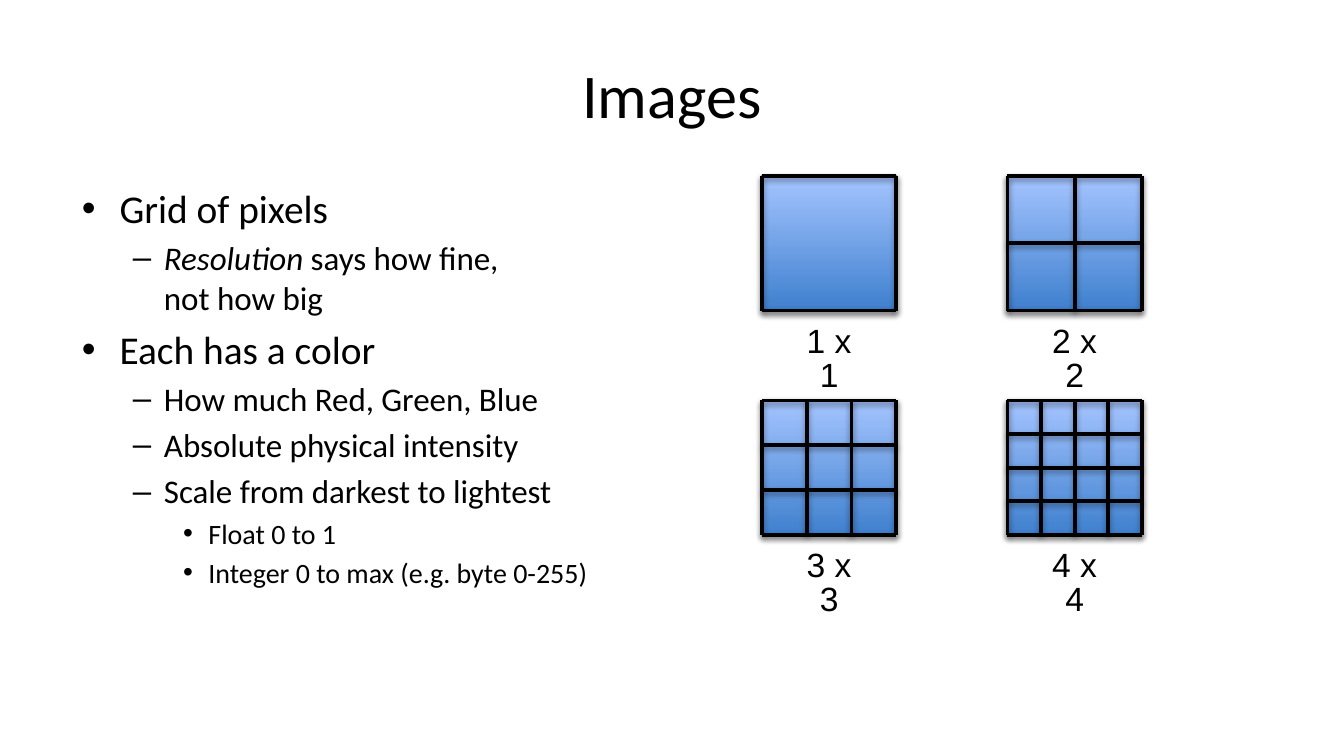
"""Builds a slide on image resolution with four pixel grids."""
from dataclasses import dataclass

from lxml import etree
from pptx import Presentation
from pptx.dml.color import RGBColor
from pptx.enum.shapes import MSO_CONNECTOR, MSO_SHAPE
from pptx.enum.text import MSO_ANCHOR, MSO_AUTO_SIZE, PP_ALIGN
from pptx.oxml.ns import qn
from pptx.shapes.autoshape import Shape
from pptx.slide import Slide
from pptx.text.text import TextFrame
from pptx.util import Cm, Pt

RECTANGLE = MSO_SHAPE.RECTANGLE
STRAIGHT = MSO_CONNECTOR.STRAIGHT
CENTER = PP_ALIGN.CENTER
MIDDLE = MSO_ANCHOR.MIDDLE
FIT_SHAPE = MSO_AUTO_SIZE.SHAPE_TO_FIT_TEXT
TOP, LEFT, BOTTOM, RIGHT = range(4)

BLACK = "000000"
GRID_SIDE = 2.54


@dataclass(frozen=True)
class Level:
    size: float
    margin: float
    hanging: float
    bullet: str


@dataclass(frozen=True)
class Point:
    level: int
    text: str
    emphasis: str = ""


@dataclass(frozen=True)
class PixelGrid:
    cells: int
    left: float
    top: float


LEVELS = (
    Level(21.1, 0.71, 0.71, "•"),
    Level(17.7, 1.55, 0.59, "–"),
    Level(15, 2.39, 0.48, "•"),
)
POINTS = (
    Point(0, "Grid of pixels"),
    Point(1, " says how fine, \vnot how big", "Resolution"),
    Point(0, "Each has a color"),
    Point(1, "How much Red, Green, Blue"),
    Point(1, "Absolute physical intensity"),
    Point(1, "Scale from darkest to lightest"),
    Point(2, "Float 0 to 1"),
    Point(2, "Integer 0 to max (e.g. byte 0-255)"),
)
GRIDS = (
    PixelGrid(1, 14.4, 3.33),
    PixelGrid(2, 19.04, 3.33),
    PixelGrid(3, 14.4, 7.57),
    PixelGrid(4, 19.04, 7.57),
)


def color(value: str) -> RGBColor:
    """Turn a hex string into a colour."""
    return RGBColor.from_string(value)


def set_font(font, name: str, size: float) -> None:
    """Give a font its face, size and black colour."""
    font.name = name
    font.size = Pt(size)
    font.color.rgb = color(BLACK)


def add_shadow(properties, distance: float, opacity: int) -> None:
    """Append a soft downward shadow to shape properties."""
    effects = etree.SubElement(properties, qn("a:effectLst"))
    shadow = etree.SubElement(
        effects, qn("a:outerShdw"), blurRad=str(Pt(3.1)), dist=str(Pt(distance)),
        dir="5400000", rotWithShape="0",
    )
    tint = etree.SubElement(shadow, qn("a:srgbClr"), val=BLACK)
    etree.SubElement(tint, qn("a:alpha"), val=str(opacity * 1000))


def add_frame(slide: Slide, left: float, top: float, width: float, height: float) -> TextFrame:
    """Add a wrapping text box and return its text frame."""
    frame = slide.shapes.add_textbox(Cm(left), Cm(top), Cm(width), Cm(height)).text_frame
    frame.word_wrap = True
    frame.margin_left = frame.margin_right = Cm(0.28)
    frame.margin_top = frame.margin_bottom = Cm(0.15)
    return frame


def add_title(slide: Slide, text: str) -> None:
    """Add the centred slide title."""
    frame = add_frame(slide, 1.27, 0.58, 22.86, 2.39)
    frame.vertical_anchor = MIDDLE
    title = frame.paragraphs[0]
    title.text = text
    title.alignment = CENTER
    set_font(title.font, "Calibri", 33.3)


def add_points(slide: Slide, points: tuple[Point, ...]) -> None:
    """Add the bulleted outline."""
    frame = add_frame(slide, 1.27, 3.33, 11.23, 9.42)
    for index, point in enumerate(points):
        paragraph = frame.add_paragraph() if index else frame.paragraphs[0]
        level = LEVELS[point.level]
        paragraph.level = point.level
        paragraph.space_before = Pt(round(0.2 * level.size, 1))
        properties = paragraph._p.get_or_add_pPr()
        properties.set("marL", str(Cm(level.margin)))
        properties.set("indent", str(-Cm(level.hanging)))
        etree.SubElement(properties, qn("a:buFont"), typeface="Arial")
        etree.SubElement(properties, qn("a:buChar"), char=level.bullet)
        set_font(paragraph.font, "Calibri", level.size)
        if point.emphasis:
            emphasis = paragraph.add_run()
            emphasis.text = point.emphasis
            emphasis.font.italic = True
        for part, wording in enumerate(point.text.split("\v")):
            if part:
                paragraph.add_line_break()
            paragraph.add_run().text = wording


def add_square(slide: Slide, grid: PixelGrid) -> Shape:
    """Add the shaded square behind a grid."""
    side = Cm(GRID_SIDE)
    square = slide.shapes.add_shape(RECTANGLE, Cm(grid.left), Cm(grid.top), side, side)
    square.fill.gradient()
    square.fill.gradient_angle = 90
    for stop, shade in zip(square.fill.gradient_stops, ("3F80CE", "A4C4FF")):
        stop.color.rgb = color(shade)
    for stop, position in zip(square.fill.gradient_stops, (0, 1)):
        stop.position = position
    square.line.color.rgb = color("4B7EBC")
    square.line.width = Pt(0.75)
    add_shadow(square._element.spPr, 1.8, 35)
    return square


def add_rule(slide: Slide, start: tuple[float, float], end: tuple[float, float],
             square: Shape, sites: tuple[int, ...]) -> None:
    """Add one grid line, joined to the square when sites are given."""
    rule = slide.shapes.add_connector(STRAIGHT, *map(Cm, start + end))
    if sites:
        rule.begin_connect(square, sites[0])
        rule.end_connect(square, sites[1])
    rule.line.color.rgb = color(BLACK)
    rule.line.width = Pt(2)
    add_shadow(rule._element.spPr, 1.6, 38)


def add_grid(slide: Slide, grid: PixelGrid) -> None:
    """Add a square, its grid lines and its caption."""
    square = add_square(slide, grid)
    right, bottom = grid.left + GRID_SIDE, grid.top + GRID_SIDE
    for index in range(grid.cells + 1):
        offset = GRID_SIDE * index / grid.cells
        x, y = grid.left + offset, grid.top + offset
        halfway = 2 * index == grid.cells
        add_rule(slide, (x, grid.top), (x, bottom), square, (TOP, BOTTOM) if halfway else ())
        add_rule(slide, (grid.left, y), (right, y), square, (LEFT, RIGHT) if halfway else ())
    frame = add_frame(slide, grid.left + 0.32, grid.top + 2.7, 1.9, 0.89)
    frame.word_wrap = False
    frame.auto_size = FIT_SHAPE
    caption = frame.paragraphs[0]
    caption.text = f"{grid.cells} x {grid.cells}"
    caption.alignment = CENTER
    caption.line_spacing = 0.83
    set_font(caption.font, "Arial", 18)


def main() -> None:
    """Build and save the slide."""
    deck = Presentation()
    deck.slide_width, deck.slide_height = Cm(25.4), Cm(14.29)
    slide = deck.slides.add_slide(deck.slide_layouts[6])
    add_title(slide, "Images")
    add_points(slide, POINTS)
    for grid in GRIDS:
        add_grid(slide, grid)
    deck.save("out.pptx")


if __name__ == "__main__":
    main()
